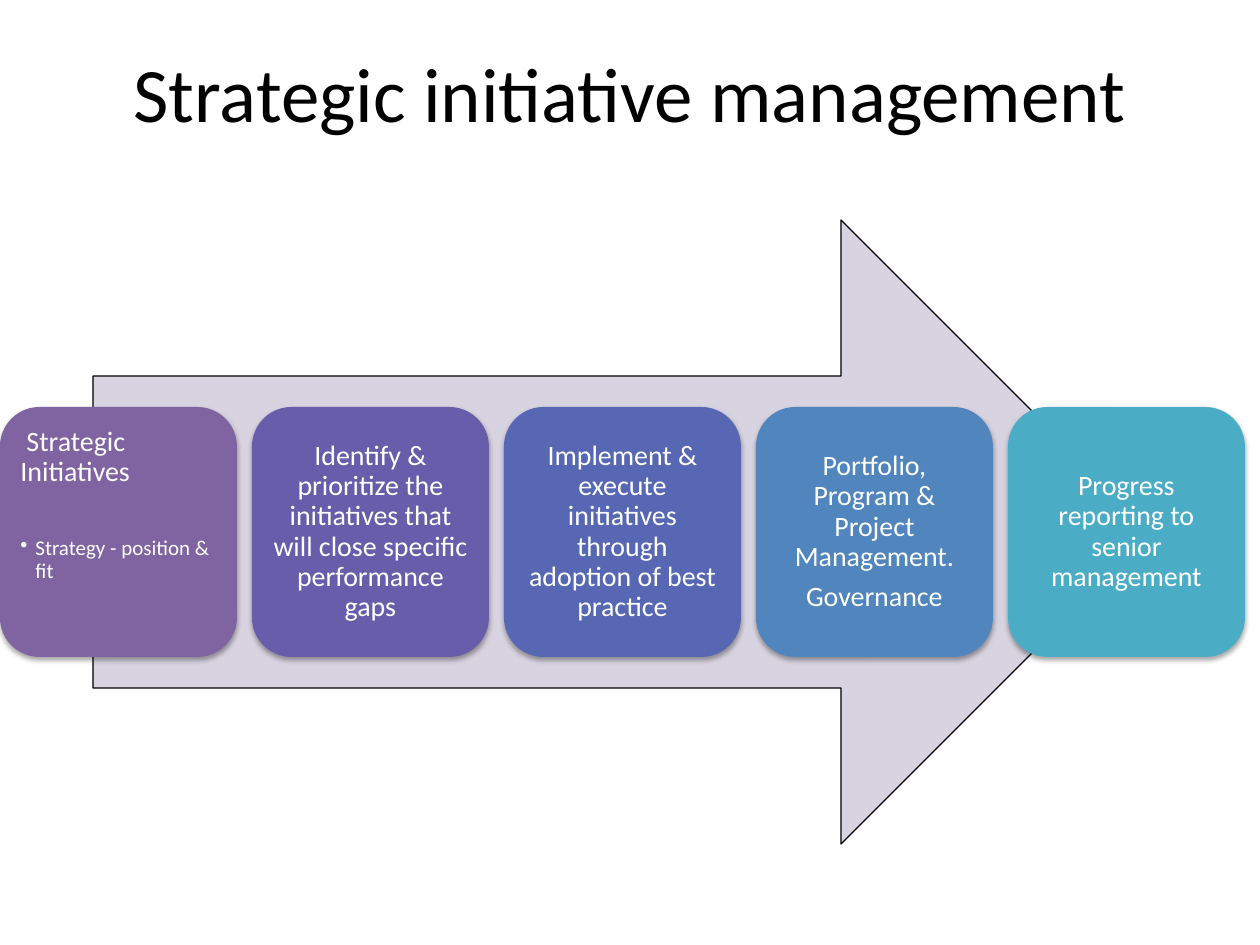
import pptx
import pptx.util
import pptx.dml.color
import pptx.enum.shapes
import pptx.enum.text
import pptx.oxml
import pptx.oxml.ns

PX = 914400 / 126
NS = pptx.oxml.ns.nsdecls("a")
SHAPE = pptx.enum.shapes.MSO_SHAPE
ALIGN = pptx.enum.text.PP_ALIGN
ANCHOR = pptx.enum.text.MSO_ANCHOR
COLORS = {
    "text": "000000", "card_text": "FFFFFF", "line": "000000", "arrow": "D8D3E0",
    "position": "8064A2", "identify": "685DAB", "implement": "5767B4",
    "govern": "5185BD", "report": "4BACC6",
}
CENTERED = {"alignment": ALIGN.CENTER, "line_spacing": 0.9,
            "space_after": pptx.util.Pt(5.6)}
HEADING = {"alignment": ALIGN.LEFT, "line_spacing": 0.9,
           "space_after": pptx.util.Pt(28.5)}
BULLET = {"alignment": ALIGN.LEFT, "line_spacing": 0.9}


def px(n):
    return pptx.util.Emu(round(n * PX))


def rgb(name):
    return pptx.dml.color.RGBColor.from_string(COLORS[name])


def apply(obj, values):
    for name, value in values.items():
        setattr(obj, name, value)


class Deck:
    font = "Calibri"

    def __init__(self, width, height):
        self.prs = pptx.Presentation()
        apply(self.prs, {"slide_width": px(width), "slide_height": px(height)})
        self.s = self.prs.slides.add_slide(self.prs.slide_layouts[6])

    def shape(self, kind, box, fill, line=None):
        sp = self.s.shapes.add_shape(kind, *map(px, box))
        sp.shadow.inherit = False
        sp.fill.solid()
        sp.fill.fore_color.rgb = rgb(fill)
        if line:
            sp.line.color.rgb = rgb(line)
            sp.line.width = pptx.util.Pt(0.75)
        else:
            sp.line.fill.background()
        return sp

    def frame(self, sp, anchor, inset):
        tf = sp.text_frame
        sides = ("left", "top", "right", "bottom")
        apply(tf, {"word_wrap": True, "vertical_anchor": anchor,
                   **{f"margin_{side}": px(inset) for side in sides}})
        return tf

    def paragraph(self, tf, text, size, color, fmt, first=0, left=0, bullet=None):
        p = tf.paragraphs[0] if not tf.text else tf.add_paragraph()
        apply(p, fmt)
        pPr = p._p.get_or_add_pPr()
        pPr.set("marL", str(px(left)))
        pPr.set("indent", str(px(first)))
        if bullet:
            pPr.append(pptx.oxml.parse_xml(f'<a:buChar {NS} char="{bullet}"/>'))
        r = p.add_run()
        r.text = text
        apply(r.font, {"name": self.font, "size": pptx.util.Pt(size)})
        r.font.color.rgb = rgb(color)

    def title(self, box, text):
        sp = self.s.shapes.add_textbox(*map(px, box))
        tf = self.frame(sp, ANCHOR.MIDDLE, 6)
        self.paragraph(tf, text, 44, "text", {"alignment": ALIGN.CENTER})

    def card(self, box, fill, anchor=ANCHOR.MIDDLE):
        sp = self.shape(SHAPE.ROUNDED_RECTANGLE, box, fill)
        effects = sp._element.spPr.find(pptx.oxml.ns.qn("a:effectLst"))
        effects.append(pptx.oxml.parse_xml(
            f'<a:outerShdw {NS} blurRad="40000" dist="23000" dir="5400000" '
            'rotWithShape="0"><a:srgbClr val="000000"><a:alpha val="35000"/>'
            '</a:srgbClr></a:outerShdw>'))
        return self.frame(sp, anchor, 9)


def main():
    deck = Deck(1260, 945)

    # Title
    deck.title((0, 13, 1260, 157), "Strategic initiative management")

    # Background arrow
    deck.shape(SHAPE.RIGHT_ARROW, (93, 220, 1060, 624), "arrow", "line")

    # Process steps
    pitch, top, width, height = 252, 407, 237, 250
    tf = deck.card((0, top, width, height), "position", ANCHOR.TOP)
    deck.paragraph(tf, "Strategic Initiatives", 16, "card_text", HEADING, first=6)
    deck.paragraph(tf, "Strategy - position & fit", 12, "card_text", BULLET,
                   first=-15, left=15, bullet="•")

    steps = [
        ("identify", ["Identify & prioritize the initiatives that will close "
                      "specific performance gaps"]),
        ("implement", ["Implement & execute initiatives through adoption of "
                       "best practice"]),
        ("govern", ["Portfolio, Program & Project Management.", "Governance"]),
        ("report", ["Progress reporting to senior management"]),
    ]
    for i, (fill, lines) in enumerate(steps, start=1):
        tf = deck.card((i * pitch, top, width, height), fill)
        for line in lines:
            deck.paragraph(tf, line, 16, "card_text", CENTERED)

    deck.prs.save("out.pptx")


if __name__ == "__main__":
    main()
